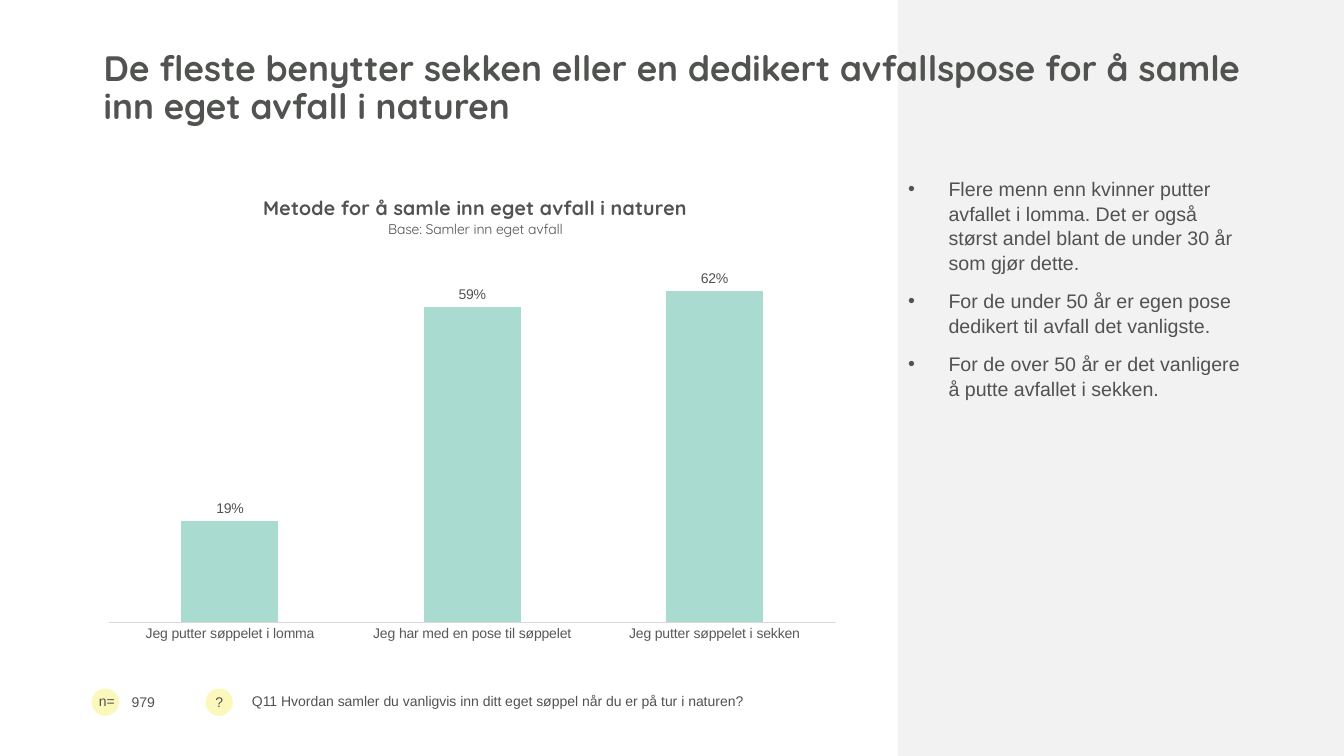
from lxml.etree import SubElement
from pptx import Presentation
from pptx.chart.data import CategoryChartData
from pptx.dml.color import RGBColor
from pptx.enum.chart import XL_CHART_TYPE as ChartType, XL_LABEL_POSITION as LabelPosition
from pptx.enum.chart import XL_TICK_MARK as TickMark
from pptx.enum.shapes import MSO_SHAPE as Preset
from pptx.enum.text import MSO_ANCHOR as Anchor, MSO_AUTO_SIZE as AutoSize, PP_ALIGN as Align
from pptx.oxml.ns import qn
from pptx.util import Cm, Pt

TITLE = "De fleste benytter sekken eller en dedikert avfallspose for å samle inn eget avfall i naturen"
FINDINGS = [
    "Flere menn enn kvinner putter avfallet i lomma. Det er også størst andel blant de under 30 år som gjør dette.",
    "For de under 50 år er egen pose dedikert til avfall det vanligste.",
    "For de over 50 år er det vanligere å putte avfallet i sekken.",
]
CHART_TITLE = [  # text, size, bold
    ("Metode for å samle inn eget avfall i naturen", 14, True),
    ("Base: Samler inn eget avfall", 10, False),
]
METHODS = {
    "Jeg putter søppelet i lomma": 0.19,
    "Jeg har med en pose til søppelet": 0.59,
    "Jeg putter søppelet i sekken": 0.62,
}
FOOTER = [  # text, left, top, width, height in cm
    ("n=", 2.24, 17.32, 1.14, 0.69),
    ("?", 5.18, 17.35, 0.64, 0.69),
    ("979", 3.07, 17.35, 1.88, 0.69),
    ("Q11 Hvordan samler du vanligvis inn ditt eget søppel når du er på tur i naturen?",
     6.1, 16.94, 25.53, 1.47),
]
BADGE_LEFTS = [2.31, 5.18]
COLORS = {"text": "515350", "axis_text": "595959", "axis": "D9D9D9",
          "bar": "AADBD1", "panel": "F2F2F2", "badge": "FCF7BA"}
WIDTH, HEIGHT = 33.87, 19.05
PANEL_LEFT, CONTENT_LEFT, CONTENT_TOP, CONTENT_RIGHT = 22.63, 2.36, 4.32, 31.62


def color(name):
    return RGBColor.from_string(COLORS[name])


def style_font(font, size, name="Arial", bold=False, color_name="text"):
    font.size, font.name, font.bold = Pt(size), name, bold
    font.color.rgb = color(color_name)


def place(shape, left, top, width, height):
    shape.left, shape.top, shape.width, shape.height = Cm(left), Cm(top), Cm(width), Cm(height)


def add_filled(slide, preset, left, top, width, height, fill):
    """Add a borderless shape behind everything that holds text."""
    shape = slide.shapes.add_shape(preset, Cm(left), Cm(top), Cm(width), Cm(height))
    shape.shadow.inherit = False
    shape.fill.solid()
    shape.fill.fore_color.rgb = color(fill)
    shape.line.fill.background()
    slide.shapes.title.element.addprevious(shape.element)


def add_title(slide):
    title = slide.shapes.title
    place(title, CONTENT_LEFT, 0.99, CONTENT_RIGHT - CONTENT_LEFT, 2.34)
    frame = title.text_frame
    frame.text = TITLE
    frame.auto_size, frame.vertical_anchor = AutoSize.NONE, Anchor.BOTTOM
    paragraph = frame.paragraphs[0]
    paragraph.alignment, paragraph.line_spacing = Align.LEFT, 0.9
    style_font(paragraph.runs[0].font, 25.2, "Quicksand", True)


def add_findings(slide):
    body = slide.placeholders[1]
    place(body, PANEL_LEFT, CONTENT_TOP, CONTENT_RIGHT - PANEL_LEFT, 11.02)
    frame = body.text_frame
    frame.text = "\n".join(FINDINGS)
    frame.auto_size = AutoSize.NONE
    for index, paragraph in enumerate(frame.paragraphs):
        paragraph.line_spacing = 1.04
        paragraph.space_before = Pt(10 if index else 0)
        properties = paragraph._p.get_or_add_pPr()
        properties.set("marL", str(Cm(1.02)))
        properties.set("indent", str(-Cm(1.02)))
        SubElement(properties, qn("a:buFont"), typeface="Arial")
        SubElement(properties, qn("a:buChar"), char="•")
        style_font(paragraph.runs[0].font, 14)


def set_layout(layout, **fractions):
    """Fix a chart part at fractions of the chart area."""
    manual = SubElement(layout, qn("c:manualLayout"))
    if "w" in fractions:
        SubElement(manual, qn("c:layoutTarget"), val="inner")
    for side in ("x", "y"):
        SubElement(manual, qn(f"c:{side}Mode"), val="edge")
    for key in fractions:
        SubElement(manual, qn(f"c:{key}"), val=str(fractions[key]))


def add_chart(slide):
    data = CategoryChartData(number_format="0%")
    data.categories = list(METHODS)
    data.add_series("Series 1", list(METHODS.values()))
    chart = slide.shapes.add_chart(
        ChartType.COLUMN_CLUSTERED, Cm(CONTENT_LEFT), Cm(CONTENT_TOP), Cm(19.08), Cm(12.09), data).chart
    chart.has_legend = False
    style_font(chart.font, 10)

    title_frame = chart.chart_title.text_frame
    title_frame.text = "\n".join(line[0] for line in CHART_TITLE)
    for paragraph, (_, size, bold) in zip(title_frame.paragraphs, CHART_TITLE):
        style_font(paragraph.runs[0].font, size, "Quicksand", bold)
    title_element = chart.chart_title._element
    set_layout(title_element.get_or_add_layout() if hasattr(title_element, "get_or_add_layout")
               else title_element.find(qn("c:layout")), x=0.22, y=0.04)
    chart.chart_title.include_in_layout = False

    plot_area = chart._chartSpace.chart.plotArea
    layout = plot_area.find(qn("c:layout"))
    if layout is None:
        layout = SubElement(plot_area, qn("c:layout"))
        plot_area.insert(0, layout)
    set_layout(layout, x=0.02, y=0.16, w=0.96, h=0.78)

    categories, values = chart.category_axis, chart.value_axis
    categories.major_tick_mark = TickMark.NONE
    style_font(categories.tick_labels.font, 10, color_name="axis_text")
    categories.format.line.color.rgb = color("axis")
    categories.format.line.width = Pt(0.75)
    values.minimum_scale, values.maximum_scale = 0, 0.7
    values.has_major_gridlines = False
    values.visible = False

    plot = chart.plots[0]
    plot.gap_width, plot.vary_by_categories = 150, False
    bars = plot.series[0]
    bars.format.fill.solid()
    bars.format.fill.fore_color.rgb = color("bar")
    labels = bars.data_labels
    labels.show_value = True
    labels.number_format, labels.number_format_is_linked = "0%", False
    labels.position = LabelPosition.OUTSIDE_END
    style_font(labels.font, 10)


def add_footer(slide):
    for text, *box in FOOTER:
        frame = slide.shapes.add_textbox(*map(Cm, box)).text_frame
        frame.text = text
        frame.word_wrap, frame.vertical_anchor = True, Anchor.MIDDLE
        style_font(frame.paragraphs[0].runs[0].font, 10)


def main():
    presentation = Presentation()
    presentation.slide_width, presentation.slide_height = Cm(WIDTH), Cm(HEIGHT)
    slide = presentation.slides.add_slide(presentation.slide_layouts[1])
    for left in BADGE_LEFTS:
        add_filled(slide, Preset.OVAL, left, 17.35, 0.69, 0.69, "badge")
    add_filled(slide, Preset.RECTANGLE, PANEL_LEFT, 0, WIDTH - PANEL_LEFT, HEIGHT, "panel")
    add_title(slide)
    add_chart(slide)
    add_findings(slide)
    add_footer(slide)
    presentation.save("out.pptx")


if __name__ == "__main__":
    main()
